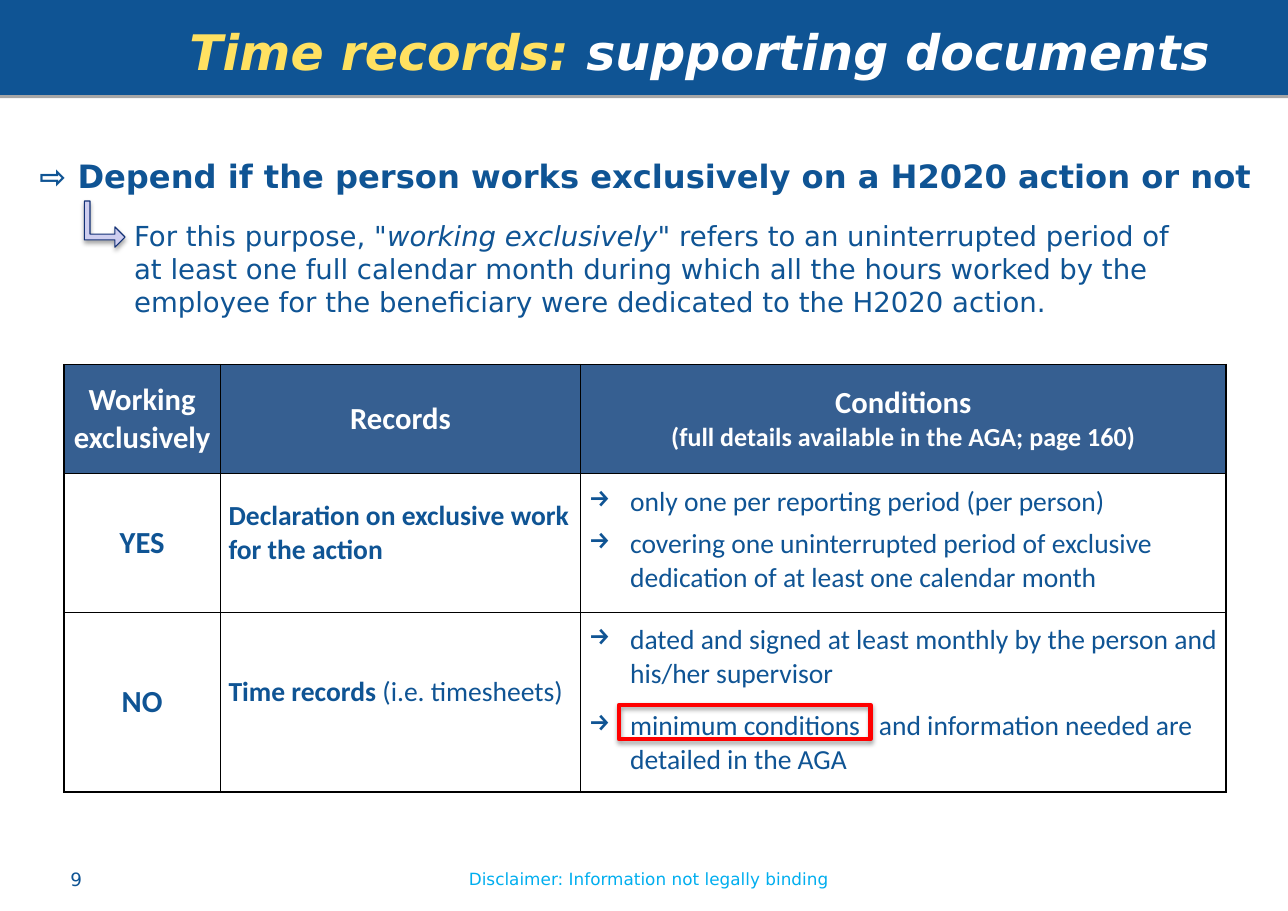
from lxml import etree
from pptx import Presentation
from pptx.dml.color import RGBColor
from pptx.enum.shapes import MSO_SHAPE
from pptx.enum.text import MSO_ANCHOR, MSO_AUTO_SIZE, PP_ALIGN
from pptx.oxml import parse_xml
from pptx.util import Pt

LEFT, CENTER = PP_ALIGN.LEFT, PP_ALIGN.CENTER
TOP, MIDDLE = MSO_ANCHOR.TOP, MSO_ANCHOR.MIDDLE
RECT, BENT = MSO_SHAPE.RECTANGLE, MSO_SHAPE.BENT_UP_ARROW
NO_FIT = MSO_AUTO_SIZE.NONE

BLUE = RGBColor(0x0F, 0x54, 0x94)
STEEL = RGBColor(0x36, 0x5F, 0x91)
CYAN = RGBColor(0x00, 0xAE, 0xEF)
YELLOW = RGBColor(0xFF, 0xE1, 0x61)
WHITE = RGBColor(0xFF, 0xFF, 0xFF)
LILAC = RGBColor(0xCE, 0xCE, 0xEF)
NAVY = RGBColor(0x13, 0x31, 0x76)
RED = RGBColor(0xFF, 0x00, 0x00)
SANS, BODY = "DejaVu Sans", "Calibri"
NS = "http://schemas.openxmlformats.org/drawingml/2006/main"


def add_run(para, text, size, color=BLUE, font=SANS, bold=False, italic=False):
    run = para.add_run()
    run.text = text
    run.font.size = Pt(size)
    run.font.color.rgb = color
    run.font.name = font
    run.font.bold = bold
    run.font.italic = italic
    return run


def add_block(kind, box, fill, line, width, blur):
    """Add a preset shape with a soft shadow below it."""
    shape = slide.shapes.add_shape(kind, *map(Pt, box))
    if fill is None:
        shape.fill.background()
    else:
        shape.fill.solid()
        shape.fill.fore_color.rgb = fill
    shape.line.color.rgb = line
    shape.line.width = Pt(width)
    shape.shadow.inherit = False
    shape.element.spPr.find(f"{{{NS}}}effectLst").append(parse_xml(
        f'<a:outerShdw xmlns:a="{NS}" blurRad="{Pt(blur)}" dist="{Pt(1.8)}" '
        'dir="5400000" rotWithShape="0"><a:srgbClr val="000000">'
        '<a:alpha val="35000"/></a:srgbClr></a:outerShdw>'))
    return shape


prs = Presentation()
prs.slide_width, prs.slide_height = Pt(841.7), Pt(595.4)
slide = prs.slides.add_slide(prs.slide_layouts[5])

# Title bar
bar = add_block(RECT, (0, 0, 841.7, 59.8), BLUE, BLUE, 5, 0)
title = slide.shapes.title
title.element.addprevious(bar.element)
title.left, title.top, title.width, title.height = map(Pt, (116.5, 3, 725, 60))
frame = title.text_frame
frame.auto_size = NO_FIT
frame.vertical_anchor = MIDDLE
para = frame.paragraphs[0]
para.alignment = LEFT
add_run(para, "Time records: ", 32, YELLOW, bold=True, italic=True)
add_run(para, "supporting documents", 32, WHITE, bold=True, italic=True)

# Text boxes: place, alignment, size, colour, bold, runs (text, italic)
notes = [
    ((38.9, 563.8, 59, 21.6), LEFT, 12, BLUE, False, [("9", False)]),
    ((290.9, 564.5, 266.4, 20.9), CENTER, 11, CYAN, False,
     [("Disclaimer: Information not legally binding", False)]),
    ((18.7, 98.6, 810.7, 32.4), LEFT, 21, BLUE, True,
     [("⇨ Depend if the person works exclusively on a H2020 action or not", False)]),
    ((80.6, 139.7, 695.5, 72.7), LEFT, 18, BLUE, False,
     [('For this purpose, "', False), ("working exclusively", True),
      ('" refers to an uninterrupted period of at least one full calendar month '
       "during which all the hours worked by the employee for the beneficiary "
       "were dedicated to the H2020 action.", False)]),
]
for box, align, size, color, bold, runs in notes:
    frame = slide.shapes.add_textbox(*map(Pt, box)).text_frame
    frame.word_wrap = True
    para = frame.paragraphs[0]
    para.alignment = align
    for text, italic in runs:
        add_run(para, text, size, color, bold=bold, italic=italic)

arrow = add_block(BENT, (53.3, 133.2, 30.2, 26.6), LILAC, NAVY, 0.75, 3.1)
arrow.rotation = 90
for i, value in enumerate((0.14, 0.25, 0.25)):
    arrow.adjustments[i] = value

# Table: each cell is a list of paragraphs, each a list of (text, size, bold)
rows = [
    [[[("Working exclusively", 20, True)]],
     [[("Records", 20, True)]],
     [[("Conditions", 20, True)],
      [("(full details available in the AGA; page 160)", 17, True)]]],
    [[[("YES", 20, True)]],
     [[("Declaration on exclusive work for the action", 18, True)]],
     [[("only one per reporting period (per person)", 18, False)],
      [("covering one uninterrupted period of exclusive dedication of "
         "at least one calendar month", 18, False)]]],
    [[[("NO", 20, True)]],
     [[("Time records", 18, True), (" (i.e. timesheets)", 18, False)]],
     [[("dated and signed at least monthly by the person and "
        "his/her supervisor", 18, False)],
      [("minimum conditions", 18, False), (" ", 18, False),
       ("and information needed are detailed in the AGA", 18, False)]]],
]
gaps = [0, 6, 12]
table = slide.shapes.add_table(3, 3, Pt(41.8), Pt(238.3), Pt(759.5), Pt(279.4)).table
for col, width in zip(table.columns, (102.2, 235.4, 421.9)):
    col.width = Pt(width)
for row, height in zip(table.rows, (71.3, 90.7, 117.4)):
    row.height = Pt(height)

for r, row in enumerate(rows):
    for c, paras in enumerate(row):
        cell = table.cell(r, c)
        head = r == 0
        listed = c == 2 and not head
        props = cell._tc.get_or_add_tcPr()
        for side in "LRTB":
            props.append(parse_xml(
                f'<a:ln{side} xmlns:a="{NS}" w="{Pt(1)}"><a:solidFill>'
                f'<a:srgbClr val="000000"/></a:solidFill></a:ln{side}>'))
        if head:
            cell.fill.solid()
            cell.fill.fore_color.rgb = STEEL
        else:
            cell.fill.background()
        cell.margin_left = cell.margin_right = Pt(5.4)
        cell.margin_top = Pt(7.3 if listed else 0)
        cell.margin_bottom = Pt(13.4 if c == 1 and not head else 0)
        cell.vertical_anchor = TOP if listed else MIDDLE
        frame = cell.text_frame
        for i, runs in enumerate(paras):
            para = frame.add_paragraph() if i else frame.paragraphs[0]
            para.alignment = CENTER if head or c == 0 else LEFT
            if listed:
                item = para._p.get_or_add_pPr()
                item.set("marL", str(Pt(27)))
                item.set("indent", str(Pt(-27)))
                etree.SubElement(item, f"{{{NS}}}buChar", char="→")
                if i:
                    para.space_before = Pt(gaps[r])
            for text, size, bold in runs:
                run = add_run(para, text, size, WHITE if head else BLUE, BODY, bold)
                if text == " ":
                    run.font._element.set("spc", "810")

add_block(RECT, (404.6, 460.8, 164.2, 22.3), None, RED, 3, 3.1)

prs.save("out.pptx")
